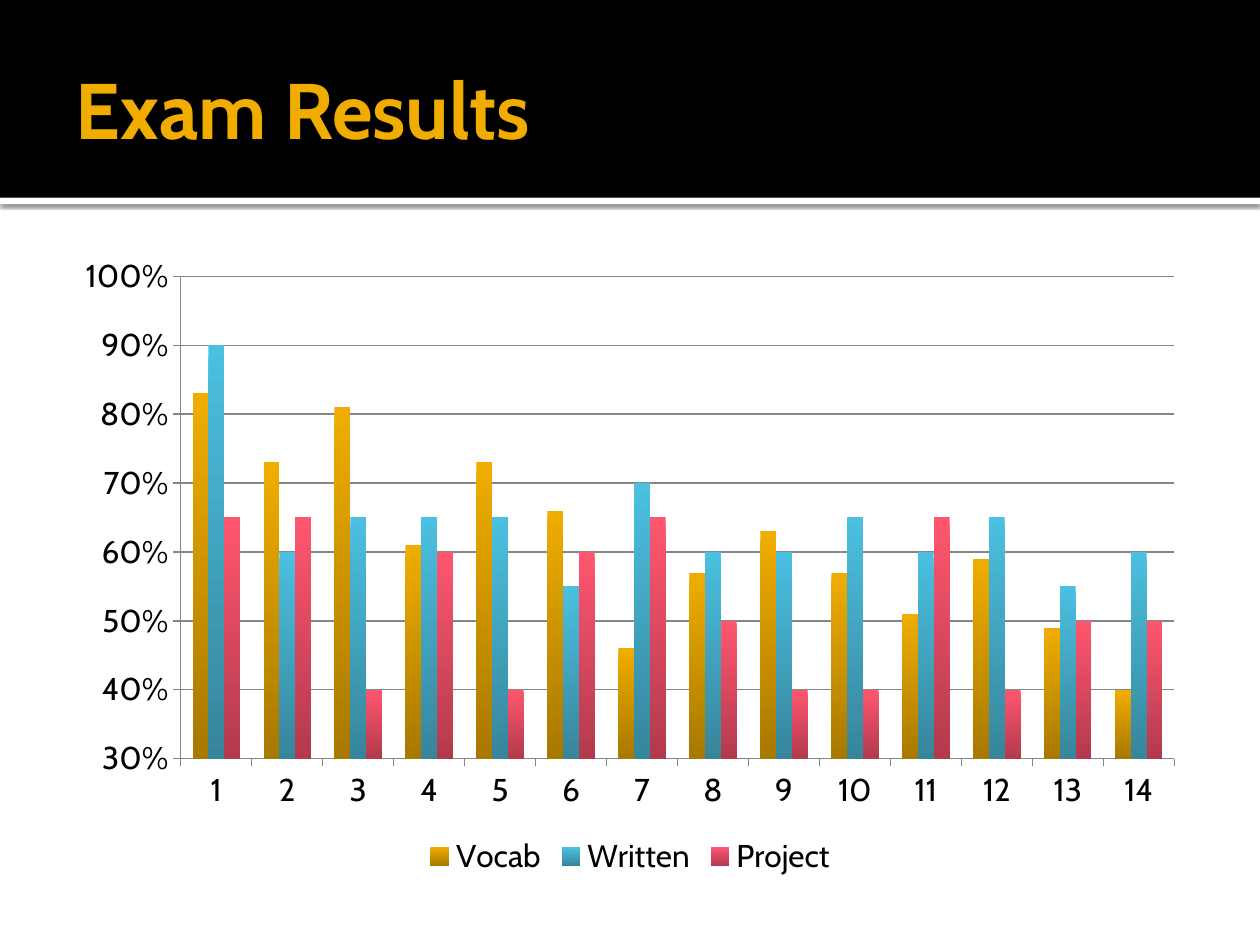
from lxml.etree import SubElement
from pptx import Presentation
from pptx.chart.data import CategoryChartData
from pptx.dml.color import RGBColor
from pptx.enum.chart import XL_CHART_TYPE, XL_LEGEND_POSITION, XL_TICK_MARK
from pptx.enum.shapes import MSO_SHAPE
from pptx.enum.text import MSO_ANCHOR, PP_ALIGN
from pptx.oxml.ns import qn
from pptx.util import Inches, Pt

FONT = "Cabin"
WIDTH, HEIGHT = 10, 7.5
MARGIN = 0.5
HEADER_H = 1.57
GRID_COLOR = "868686"

# name: (values, top colour, bottom colour)
RESULTS = {
    "Vocab": ([0.83, 0.73, 0.81, 0.61, 0.73, 0.66, 0.46,
               0.57, 0.63, 0.57, 0.51, 0.59, 0.49, 0.4], "F0AD00", "A87900"),
    "Written": ([0.9, 0.6, 0.65, 0.65, 0.65, 0.55, 0.7,
                 0.6, 0.6, 0.65, 0.6, 0.65, 0.55, 0.6], "4BC0E0", "37859B"),
    "Project": ([0.65, 0.65, 0.4, 0.6, 0.4, 0.6, 0.65,
                 0.5, 0.4, 0.4, 0.65, 0.4, 0.5, 0.5], "FF566F", "B23A4D"),
}


def rgb(color):
    return RGBColor.from_string(color)


def format_font(font, size, color, bold=False):
    font.name, font.size, font.bold = FONT, Pt(size), bold
    font.color.rgb = rgb(color)


def write(tf, text, size, color, bold=False):
    p = tf.paragraphs[0]
    p.alignment = PP_ALIGN.LEFT
    r = p.add_run()
    r.text = text
    format_font(r.font, size, color, bold)


def add_band(s, top, height, color):
    sp = s.shapes.add_shape(MSO_SHAPE.RECTANGLE, 0, Inches(top),
                            Inches(WIDTH), Inches(height))
    sp.shadow.inherit = False
    sp.fill.solid()
    sp.fill.fore_color.rgb = rgb(color)
    sp.line.fill.background()
    return sp


def add_drop_shadow(sp, color, opacity, blur, distance):
    effects = sp._element.spPr.find(qn("a:effectLst"))
    shadow = SubElement(effects, qn("a:outerShdw"), blurRad=str(Pt(blur)),
                        dist=str(Pt(distance)), dir="5400000", algn="tl",
                        rotWithShape="0")
    clr = SubElement(shadow, qn("a:srgbClr"), val=color)
    SubElement(clr, qn("a:alpha"), val=str(opacity * 1000))


def place_title(s, text):
    title = s.shapes.title
    title.left, title.top = Inches(MARGIN), Inches(0.17)
    title.width, title.height = Inches(WIDTH - 2 * MARGIN), Inches(1.37)
    tf = title.text_frame
    tf.word_wrap = True
    tf.vertical_anchor = MSO_ANCHOR.MIDDLE
    tf.margin_left = Inches(0.1)
    tf.margin_top = tf.margin_right = tf.margin_bottom = Inches(0.05)
    write(tf, text, size=45, color="F0AD00", bold=True)
    s.shapes._spTree.append(title._element)  # in front of the bands


def style_line(line):
    line.color.rgb = rgb(GRID_COLOR)
    line.width = Pt(0.75)


def style_axis(axis):
    axis.major_tick_mark = XL_TICK_MARK.OUTSIDE
    axis.minor_tick_mark = XL_TICK_MARK.NONE
    style_line(axis.format.line)


def fill_gradient(fill, top, bottom):
    fill.gradient()
    fill.gradient_angle = 270
    for stop, color, position in zip(fill.gradient_stops, (top, bottom), (0, 1)):
        stop.color.rgb = rgb(color)
        stop.position = position


def add_results_chart(s):
    data = CategoryChartData(number_format="0%")
    data.categories = [str(n) for n in range(1, 15)]
    for name, (values, _, _) in RESULTS.items():
        data.add_series(name, values)
    top = 1.94
    chart = s.shapes.add_chart(
        XL_CHART_TYPE.COLUMN_CLUSTERED, Inches(MARGIN), Inches(top),
        Inches(WIDTH - 2 * MARGIN), Inches(HEIGHT - MARGIN - top), data).chart
    chart.has_title = False
    format_font(chart.font, 18, "000000")
    chart.has_legend = True
    chart.legend.position = XL_LEGEND_POSITION.BOTTOM
    chart.legend.include_in_layout = False

    style_axis(chart.category_axis)
    axis = chart.value_axis
    style_axis(axis)
    axis.minimum_scale, axis.maximum_scale, axis.major_unit = 0.3, 1, 0.1
    axis.has_major_gridlines = True
    style_line(axis.major_gridlines.format.line)
    axis.tick_labels.number_format = "0%"
    axis.tick_labels.number_format_is_linked = False

    plot = chart.plots[0]
    plot.gap_width, plot.overlap, plot.vary_by_categories = 150, 0, False
    for series, (_, light, dark) in zip(plot.series, RESULTS.values()):
        series.invert_if_negative = False
        fill_gradient(series.format.fill, light, dark)


def main():
    prs = Presentation()
    prs.slide_width, prs.slide_height = Inches(WIDTH), Inches(HEIGHT)
    s = prs.slides.add_slide(prs.slide_layouts[5])
    strip = add_band(s, HEADER_H, 0.05, "FFFFFF")
    add_drop_shadow(strip, "000000", opacity=60, blur=2.5, distance=0.8)
    add_band(s, 0, HEADER_H, "000000")
    place_title(s, "Exam Results")
    add_results_chart(s)
    prs.save("out.pptx")


if __name__ == "__main__":
    main()
